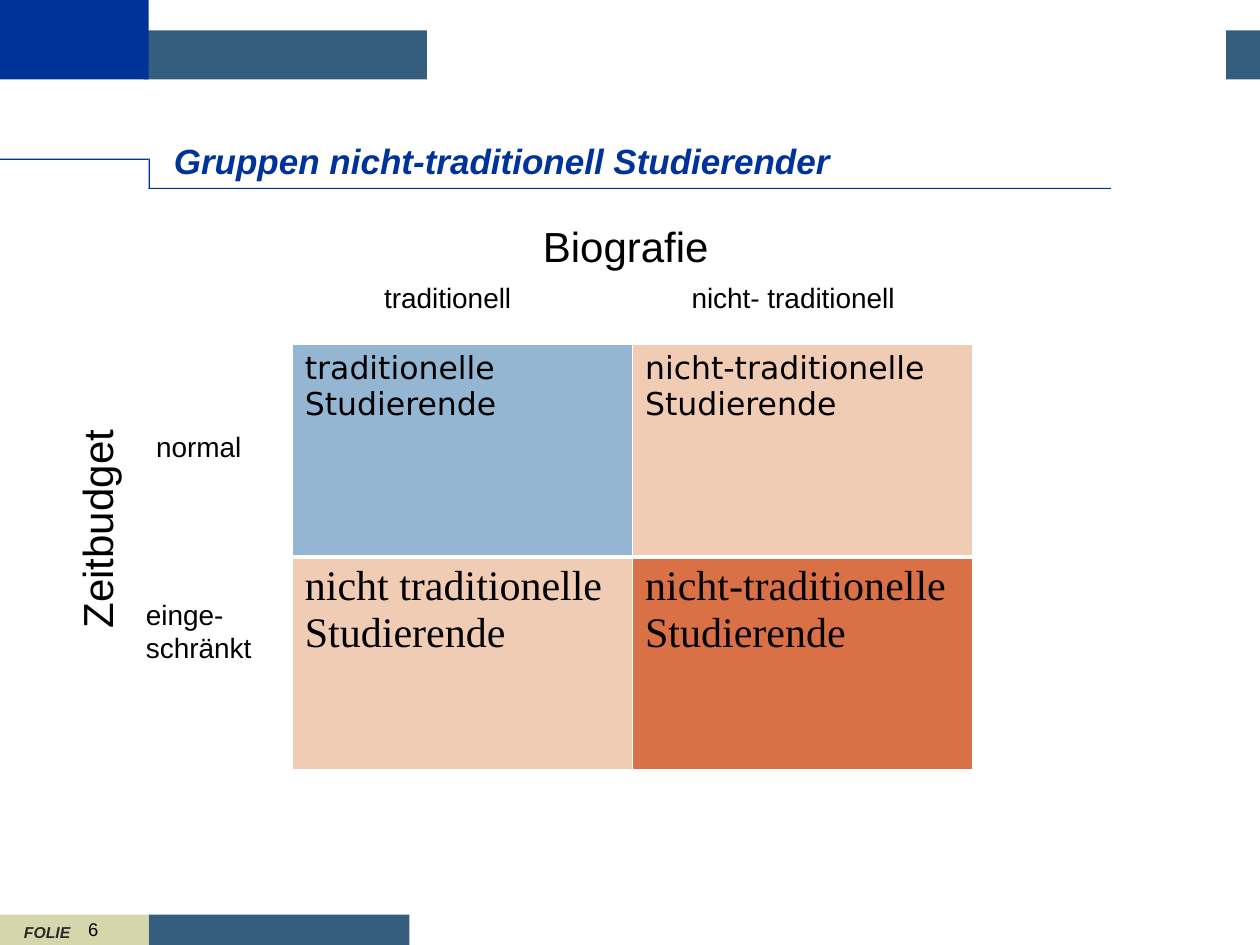
from dataclasses import dataclass

from lxml import etree
from pptx import Presentation
from pptx.dml.color import RGBColor
from pptx.enum.shapes import MSO_SHAPE
from pptx.enum.text import MSO_ANCHOR, MSO_AUTO_SIZE
from pptx.oxml.ns import qn
from pptx.slide import Slide
from pptx.table import _Cell
from pptx.text.text import TextFrame
from pptx.util import Inches, Pt

RECTANGLE = MSO_SHAPE.RECTANGLE
TOP = MSO_ANCHOR.TOP
BOTTOM = MSO_ANCHOR.BOTTOM
FIT_SHAPE = MSO_AUTO_SIZE.SHAPE_TO_FIT_TEXT
NO_FIT = MSO_AUTO_SIZE.NONE

WHITE = RGBColor(0xFF, 0xFF, 0xFF)
BLACK = RGBColor(0x00, 0x00, 0x00)
CHARCOAL = RGBColor(0x29, 0x29, 0x29)
NAVY = RGBColor(0x00, 0x33, 0x99)
STEEL = RGBColor(0x35, 0x5D, 0x7E)
OLIVE = RGBColor(0xD6, 0xD6, 0xAD)
LIGHT_BLUE = RGBColor(0x94, 0xB6, 0xD2)
PEACH = RGBColor(0xF1, 0xCC, 0xB5)
ORANGE = RGBColor(0xDA, 0x70, 0x46)

MARGINS = ("margin_left", "margin_top", "margin_right", "margin_bottom")


@dataclass(frozen=True)
class Bar:
    left: float
    top: float
    width: float
    height: float
    color: RGBColor


@dataclass(frozen=True)
class Label:
    text: str
    left: float
    top: float
    width: float
    height: float
    size: float
    color: RGBColor = BLACK
    emphasis: bool = False
    inset: bool = True
    anchor: MSO_ANCHOR = TOP
    fit: MSO_AUTO_SIZE = FIT_SHAPE
    rotation: float = 0


@dataclass(frozen=True)
class Group:
    text: str
    fill: RGBColor
    font: str
    size: float


BARS = (
    Bar(1.14, 0.24, 8.86, 0.39, STEEL),
    Bar(3.39, 0, 4.29, 0.84, WHITE),
    Bar(0, 0, 1.18, 0.63, NAVY),
    Bar(1.18, 7.26, 2.07, 0.24, STEEL),
    Bar(0, 7.26, 1.18, 0.24, OLIVE),
    Bar(0, 1.26, 1.18, 0.01, NAVY),
    Bar(1.18, 1.49, 7.64, 0.01, NAVY),
    Bar(1.18, 1.26, 0.01, 0.24, NAVY),
    Bar(7.13, 0, 2.6, 0.84, WHITE),
)

LABELS = (
    Label("FOLIE", 0.19, 7.32, 0.64, 0.15, 9, CHARCOAL, True, False, BOTTOM),
    Label("6", 0.6, 7.24, 0.62, 0.21, 10.5, fit=NO_FIT),
    Label("Gruppen nicht-traditionell Studierender", 1.38, 0.71, 8.5, 0.73, 20,
          NAVY, True, False, BOTTOM, NO_FIT),
    Label("Zeitbudget", -0.14, 3.93, 1.81, 0.5, 24, rotation=270),
    Label("Biografie", 4.21, 1.7, 2.52, 0.5, 24),
    Label("traditionell", 2.95, 2.18, 1.26, 0.37, 16),
    Label("nicht- traditionell", 5.39, 2.18, 2.2, 0.37, 16),
    Label("normal", 1.14, 3.36, 0.94, 0.37, 16),
    Label("einge-schränkt", 1.06, 4.69, 1.1, 0.64, 16),
)

GROUPS = (
    (
        Group("traditionelle Studierende", LIGHT_BLUE, "DejaVu Sans", 18),
        Group("nicht-traditionelle Studierende", PEACH, "DejaVu Sans", 18),
    ),
    (
        Group("nicht traditionelle Studierende", PEACH, "Times New Roman", 24),
        Group("nicht-traditionelle Studierende", ORANGE, "Times New Roman", 24),
    ),
)

TABLE_LEFT, TABLE_TOP = 2.32, 2.73
COLUMN_WIDTH, ROW_HEIGHT = 2.7, 1.69
ROW_BORDERS = (
    {"lnL": 1, "lnR": 1, "lnT": 1, "lnB": 3},
    {"lnL": 1, "lnR": 1, "lnT": 3, "lnB": 1},
)


def write_text(frame: TextFrame, text: str, font_format: dict, color: RGBColor) -> None:
    paragraph = frame.paragraphs[0]
    run = paragraph.add_run()
    run.text = text
    for name, value in font_format.items():
        setattr(run.font, name, value)
    run.font.color.rgb = color


def draw_bar(slide: Slide, bar: Bar) -> None:
    box = map(Inches, (bar.left, bar.top, bar.width, bar.height))
    shape = slide.shapes.add_shape(RECTANGLE, *box)
    shape.shadow.inherit = False
    shape.fill.solid()
    shape.fill.fore_color.rgb = bar.color
    shape.line.fill.background()


def draw_label(slide: Slide, label: Label) -> None:
    box = map(Inches, (label.left, label.top, label.width, label.height))
    shape = slide.shapes.add_textbox(*box)
    shape.rotation = label.rotation
    frame = shape.text_frame
    frame_format = {
        "word_wrap": True,
        "auto_size": label.fit,
        "vertical_anchor": label.anchor,
    }
    if not label.inset:
        frame_format.update(dict.fromkeys(MARGINS, 0))
    for name, value in frame_format.items():
        setattr(frame, name, value)
    font_format = {
        "name": "Arial",
        "size": Pt(label.size),
        "bold": label.emphasis,
        "italic": label.emphasis,
    }
    write_text(frame, label.text, font_format, label.color)


def set_borders(cell: _Cell, borders: dict[str, float]) -> None:
    properties = cell._tc.get_or_add_tcPr()
    for position, (side, width) in enumerate(borders.items()):
        line = etree.Element(qn(f"a:{side}"), w=str(Pt(width)))
        fill = etree.SubElement(line, qn("a:solidFill"))
        etree.SubElement(fill, qn("a:srgbClr"), val=str(WHITE))
        properties.insert(position, line)


def draw_matrix(slide: Slide) -> None:
    rows, columns = len(GROUPS), len(GROUPS[0])
    box = (TABLE_LEFT, TABLE_TOP, columns * COLUMN_WIDTH, rows * ROW_HEIGHT)
    table = slide.shapes.add_table(rows, columns, *map(Inches, box)).table
    table.first_row = False
    table.horz_banding = False
    for column in table.columns:
        column.width = Inches(COLUMN_WIDTH)
    for row, groups, borders in zip(table.rows, GROUPS, ROW_BORDERS):
        row.height = Inches(ROW_HEIGHT)
        for cell, group in zip(row.cells, groups):
            cell.fill.solid()
            cell.fill.fore_color.rgb = group.fill
            set_borders(cell, borders)
            font_format = {"name": group.font, "size": Pt(group.size), "bold": False}
            write_text(cell.text_frame, group.text, font_format, BLACK)


def main() -> None:
    presentation = Presentation()
    presentation.slide_width = Inches(10)
    presentation.slide_height = Inches(7.5)
    slide = presentation.slides.add_slide(presentation.slide_layouts[6])
    for bar in BARS:
        draw_bar(slide, bar)
    draw_matrix(slide)
    for label in LABELS:
        draw_label(slide, label)
    presentation.save("out.pptx")


if __name__ == "__main__":
    main()
